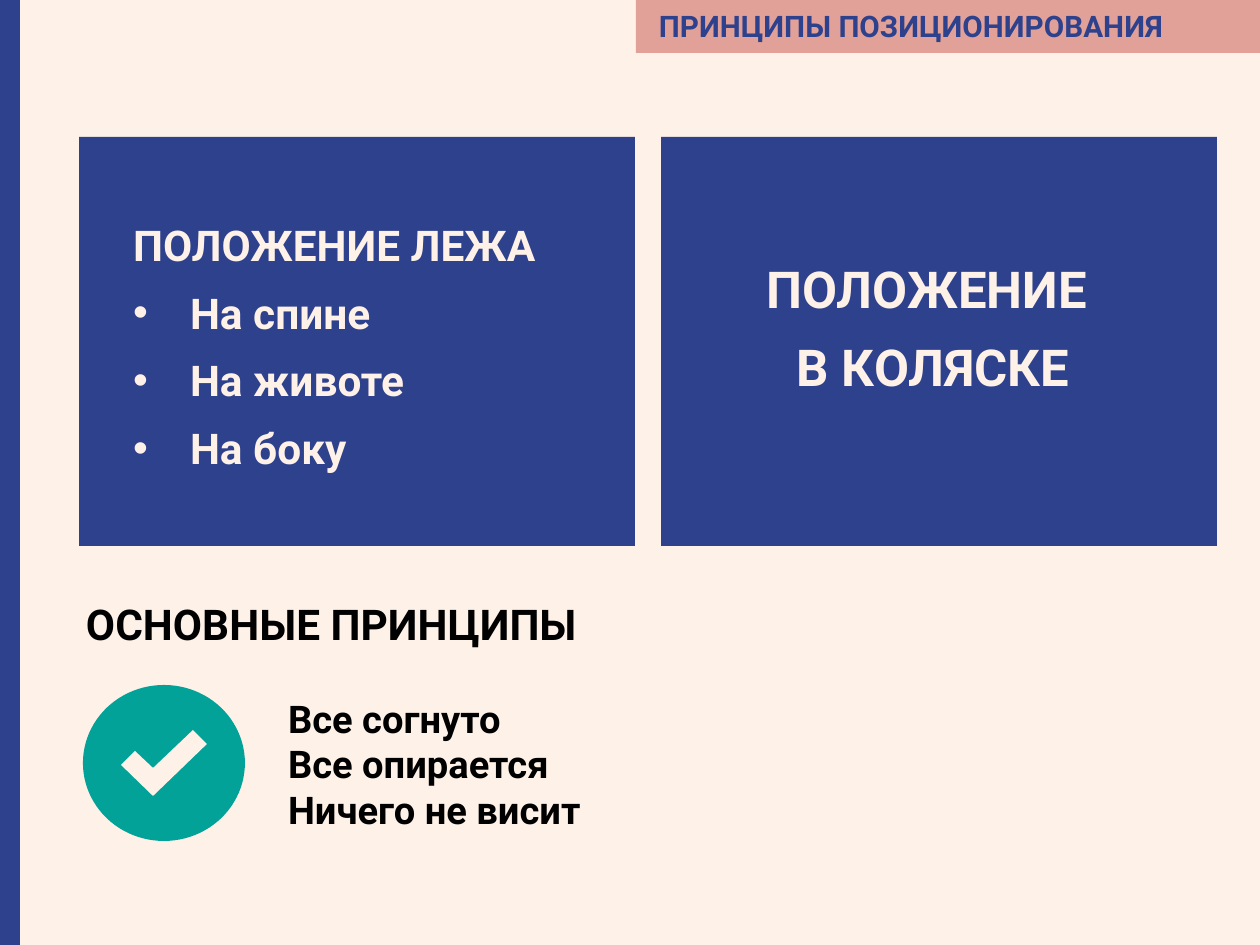
from dataclasses import dataclass

from lxml import etree
from pptx import Presentation
from pptx import util as u
from pptx.dml.color import RGBColor
from pptx.enum import shapes, text
from pptx.oxml import ns

PX = 6000  # EMU in one px


@dataclass(frozen=True)
class Theme:
    cream: str = "FEF1E8"
    blue: str = "2E418D"
    pink: str = "E1A198"
    teal: str = "02A298"
    black: str = "000000"
    font: str = "Roboto"
    header: int = 14
    note: int = 18
    heading: int = 20
    panel: int = 24


THEME = Theme()


def px(value):
    return u.Emu(round(value * PX))


def apply(target, values):
    for name, value in values.items():
        setattr(target, name, value)


def place(shape, area):
    apply(shape, dict(zip(("left", "top", "width", "height"), map(px, area))))


def paint(shape, color):
    shape.fill.solid()
    shape.fill.fore_color.rgb = RGBColor.from_string(color)
    shape.line.fill.background()
    shape.shadow.inherit = False


def add_block(page, kind, area, color):
    block = page.shapes.add_shape(kind, *map(px, area))
    paint(block, color)
    return block


def set_bullet(para, bullet, indent):
    props = para._p.get_or_add_pPr()
    hang = px(indent) if bullet else 0
    props.set("marL", str(hang))
    props.set("indent", str(-hang))
    if bullet:
        etree.SubElement(props, ns.qn("a:buFont")).set("typeface", "Arial")
        etree.SubElement(props, ns.qn("a:buChar")).set("char", bullet)
    else:
        etree.SubElement(props, ns.qn("a:buNone"))


def write(box, lines, size, color, insets=(0, 0, 0, 0), after=0, spacing=1.0,
          align=text.PP_ALIGN.LEFT, anchor=text.MSO_ANCHOR.TOP):
    """Fill a box with (bullet, wording) lines."""
    frame = box.text_frame
    sides = ("margin_left", "margin_top", "margin_right", "margin_bottom")
    apply(frame, dict(zip(sides, map(px, insets))))
    apply(frame, {"word_wrap": True, "vertical_anchor": anchor,
                  "auto_size": text.MSO_AUTO_SIZE.NONE})
    for index, (bullet, wording) in enumerate(lines):
        para = frame.paragraphs[0] if index == 0 else frame.add_paragraph()
        apply(para, {"alignment": align, "line_spacing": spacing,
                     "space_before": u.Pt(0), "space_after": u.Pt(after)})
        set_bullet(para, bullet, 57)
        span = para.add_run()
        span.text = wording
        apply(span.font, {"name": THEME.font, "size": u.Pt(size), "bold": True})
        span.font.color.rgb = RGBColor.from_string(color)


def add_text(page, area, wordings, size):
    box = page.shapes.add_textbox(*map(px, area))
    write(box, [(None, wording) for wording in wordings], size, THEME.black)


def add_check(page, area, points):
    add_block(page, shapes.MSO_SHAPE.OVAL, area, THEME.teal)
    start, *rest = points
    builder = page.shapes.build_freeform(*start, scale=PX)
    builder.add_line_segments(rest, close=True)
    paint(builder.convert_to_shape(), THEME.cream)


def main():
    deck = Presentation()
    apply(deck, {"slide_width": px(1260), "slide_height": px(945)})
    page = deck.slides.add_slide(deck.slide_layouts[1])
    page.background.fill.solid()
    page.background.fill.fore_color.rgb = RGBColor.from_string(THEME.cream)
    rectangle = shapes.MSO_SHAPE.RECTANGLE

    # Side bar and header
    add_block(page, rectangle, (0, 0, 20, 945), THEME.blue)
    title = page.shapes.title
    place(title, (636, 0, 624, 53))
    paint(title, THEME.pink)
    write(title, [(None, "ПРИНЦИПЫ ПОЗИЦИОНИРОВАНИЯ")], THEME.header, THEME.blue,
          insets=(23, 3, 0, 0), spacing=0.93, anchor=text.MSO_ANCHOR.MIDDLE)

    # Two position panels
    top, width, height, gap = 137, 556, 409, 26
    lying = page.placeholders[1]
    place(lying, (79, top, width, height))
    paint(lying, THEME.blue)
    positions = [("•", name) for name in ("На спине", "На животе", "На боку")]
    write(lying, [(None, "ПОЛОЖЕНИЕ ЛЕЖА"), *positions], THEME.heading,
          THEME.cream, insets=(54, 82, 0, 0), after=8)
    seated = add_block(page, rectangle, (79 + width + gap, top, width, height),
                       THEME.blue)
    write(seated, [(None, "ПОЛОЖЕНИЕ "), (None, "В КОЛЯСКЕ")], THEME.panel,
          THEME.cream, insets=(0, 121, 12, 0), after=8,
          align=text.PP_ALIGN.CENTER)

    # Main principles
    add_text(page, (86, 598, 700, 60), ["ОСНОВНЫЕ ПРИНЦИПЫ"], THEME.heading)
    add_check(page, (83, 685, 162, 156),
              [(121, 765), (135, 751), (153, 768), (193, 730), (207, 744), (153, 796)])
    add_text(page, (288, 695, 400, 140),
             ["Все согнуто", "Все опирается", "Ничего не висит"], THEME.note)

    deck.save("out.pptx")


if __name__ == "__main__":
    main()
